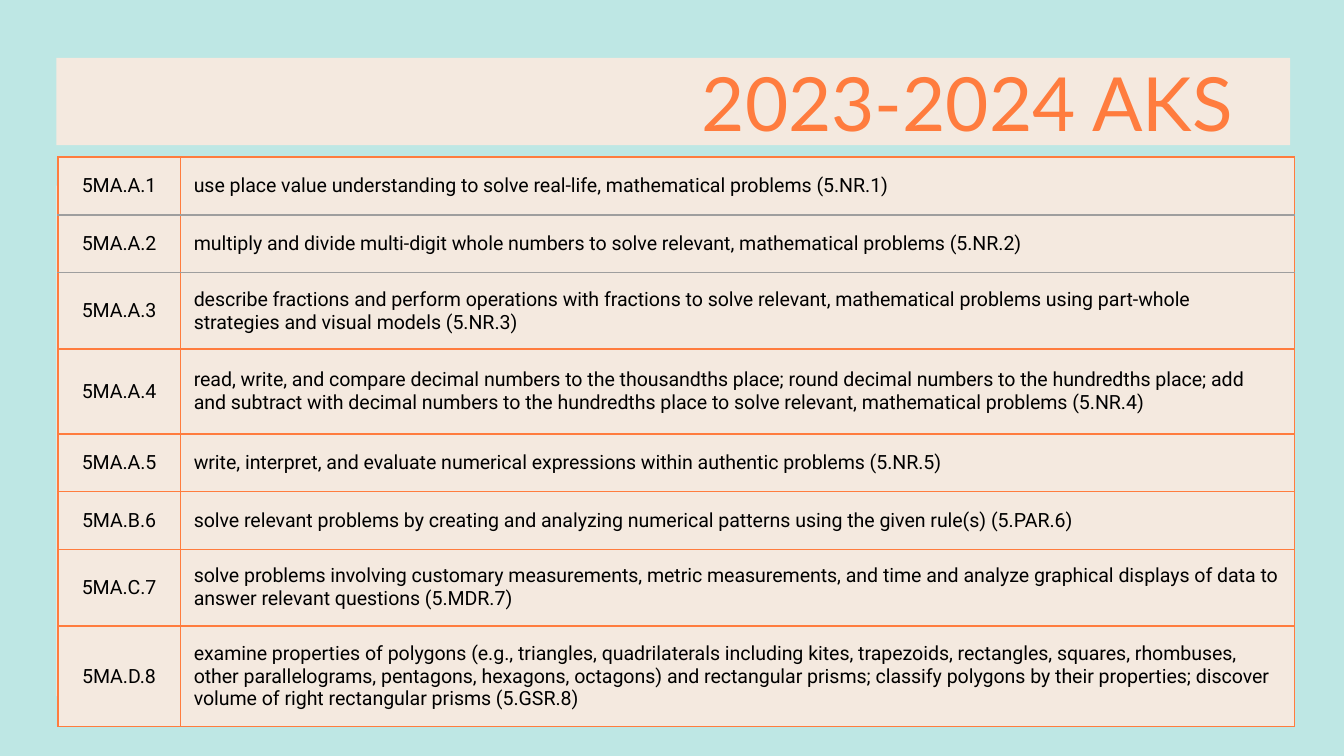
"""Build the 2023-2024 AKS slide: a title band above a table of standards."""
from lxml.etree import SubElement
from pptx import Presentation
from pptx.dml.color import RGBColor
from pptx.enum.shapes import MSO_SHAPE as Preset
from pptx.enum.text import MSO_ANCHOR as Anchor, PP_ALIGN as Align
from pptx.oxml.ns import qn
from pptx.util import Pt

TITLE = "2023-2024 AKS"
STANDARDS = [
    ("5MA.A.1", "use place value understanding to solve real-life, mathematical problems (5.NR.1)", 31),
    ("5MA.A.2", "multiply and divide multi-digit whole numbers to solve relevant, mathematical problems (5.NR.2)", 31),
    ("5MA.A.3", "describe fractions and perform operations with fractions to solve relevant, "
     "mathematical problems using part-whole strategies and visual models (5.NR.3)", 41),
    ("5MA.A.4", "read, write, and compare decimal numbers to the thousandths place; round decimal numbers "
     "to the hundredths place; add and subtract with decimal numbers to the hundredths place "
     "to solve relevant, mathematical problems (5.NR.4)", 45.3),
    ("5MA.A.5", "write, interpret, and evaluate numerical expressions within authentic problems (5.NR.5)", 31),
    ("5MA.B.6", "solve relevant problems by creating and analyzing numerical patterns "
     "using the given rule(s) (5.PAR.6)", 31),
    ("5MA.C.7", "solve problems involving customary measurements, metric measurements, and time and "
     "analyze graphical displays of data to answer relevant questions (5.MDR.7)", 41),
    ("5MA.D.8", "examine properties of polygons (e.g., triangles, quadrilaterals including kites, trapezoids, "
     "rectangles, squares, rhombuses, other parallelograms, pentagons, hexagons, octagons) and rectangular "
     "prisms; classify polygons by their properties; discover volume of right rectangular prisms (5.GSR.8)", 54),
]
GRAY_RULES = (1, 2)

AQUA = RGBColor(0xBE, 0xE7, 0xE4)
CREAM = RGBColor(0xF4, 0xE9, 0xDF)
ORANGE = RGBColor(0xFF, 0x7C, 0x3E)
GRAY = RGBColor(0x9E, 0x9E, 0x9E)
BLACK = RGBColor(0, 0, 0)

PANELS = [(30.2, 31, 661, 46.8), (30.2, 99.4, 661, 273.6)]
TITLE_BOX = (264.2, 31, 403.2, 46.8)
TABLE_LEFT, TABLE_TOP = 31, 84.1
COLUMN_WIDTHS = (65.6, 596.8)
COLUMN_ALIGNS = (Align.CENTER, Align.LEFT)
MARGINS = {f"margin_{side}": Pt(7.2) for side in ("left", "top", "right", "bottom")}
TITLE_FONT = {"name": "Lato", "size": Pt(40)}
BODY_FONT = {"name": "Roboto", "size": Pt(10.5)}


def apply(target, values):
    for key, value in values.items():
        setattr(target, key, value)


def paint(fill, color):
    fill.solid()
    fill.fore_color.rgb = color


def write(frame, text, align, font, color):
    paragraph = frame.paragraphs[0]
    paragraph.alignment = align
    run = paragraph.add_run()
    run.text = text
    apply(run.font, font)
    run.font.color.rgb = color


def add_borders(cell, colors):
    properties = cell._tc.get_or_add_tcPr()
    for index, (edge, color) in enumerate(colors.items()):
        line = properties.makeelement(qn(f"a:{edge}"), {"w": str(Pt(1))})
        fill = SubElement(line, qn("a:solidFill"))
        SubElement(fill, qn("a:srgbClr"), val=str(color))
        properties.insert(index, line)


def rule_color(boundary):
    return GRAY if boundary in GRAY_RULES else ORANGE


def main():
    deck = Presentation()
    apply(deck, {"slide_width": Pt(720), "slide_height": Pt(405)})
    slide = deck.slides.add_slide(deck.slide_layouts[6])
    paint(slide.background.fill, AQUA)

    for box in PANELS:
        panel = slide.shapes.add_shape(Preset.RECTANGLE, *map(Pt, box))
        panel.shadow.inherit = False
        paint(panel.fill, CREAM)
        panel.line.fill.background()

    title = slide.shapes.add_textbox(*map(Pt, TITLE_BOX)).text_frame
    apply(title, {"word_wrap": True, "vertical_anchor": Anchor.MIDDLE, **MARGINS})
    write(title, TITLE, Align.RIGHT, TITLE_FONT, ORANGE)

    table_height = sum(height for *_, height in STANDARDS)
    standards = slide.shapes.add_table(
        len(STANDARDS), len(COLUMN_WIDTHS), Pt(TABLE_LEFT), Pt(TABLE_TOP),
        Pt(sum(COLUMN_WIDTHS)), Pt(table_height)).table
    apply(standards, {"first_row": False, "horz_banding": False})
    for column, width in zip(standards.columns, COLUMN_WIDTHS):
        column.width = Pt(width)

    for row, (code, description, height) in enumerate(STANDARDS):
        standards.rows[row].height = Pt(height)
        for column, (text, align) in enumerate(zip((code, description), COLUMN_ALIGNS)):
            cell = standards.cell(row, column)
            apply(cell, {"vertical_anchor": Anchor.MIDDLE, **MARGINS})
            paint(cell.fill, CREAM)
            write(cell.text_frame, text, align, BODY_FONT, BLACK)
            add_borders(cell, {"lnL": ORANGE, "lnR": ORANGE,
                               "lnT": rule_color(row), "lnB": rule_color(row + 1)})

    deck.save("out.pptx")


if __name__ == "__main__":
    main()
